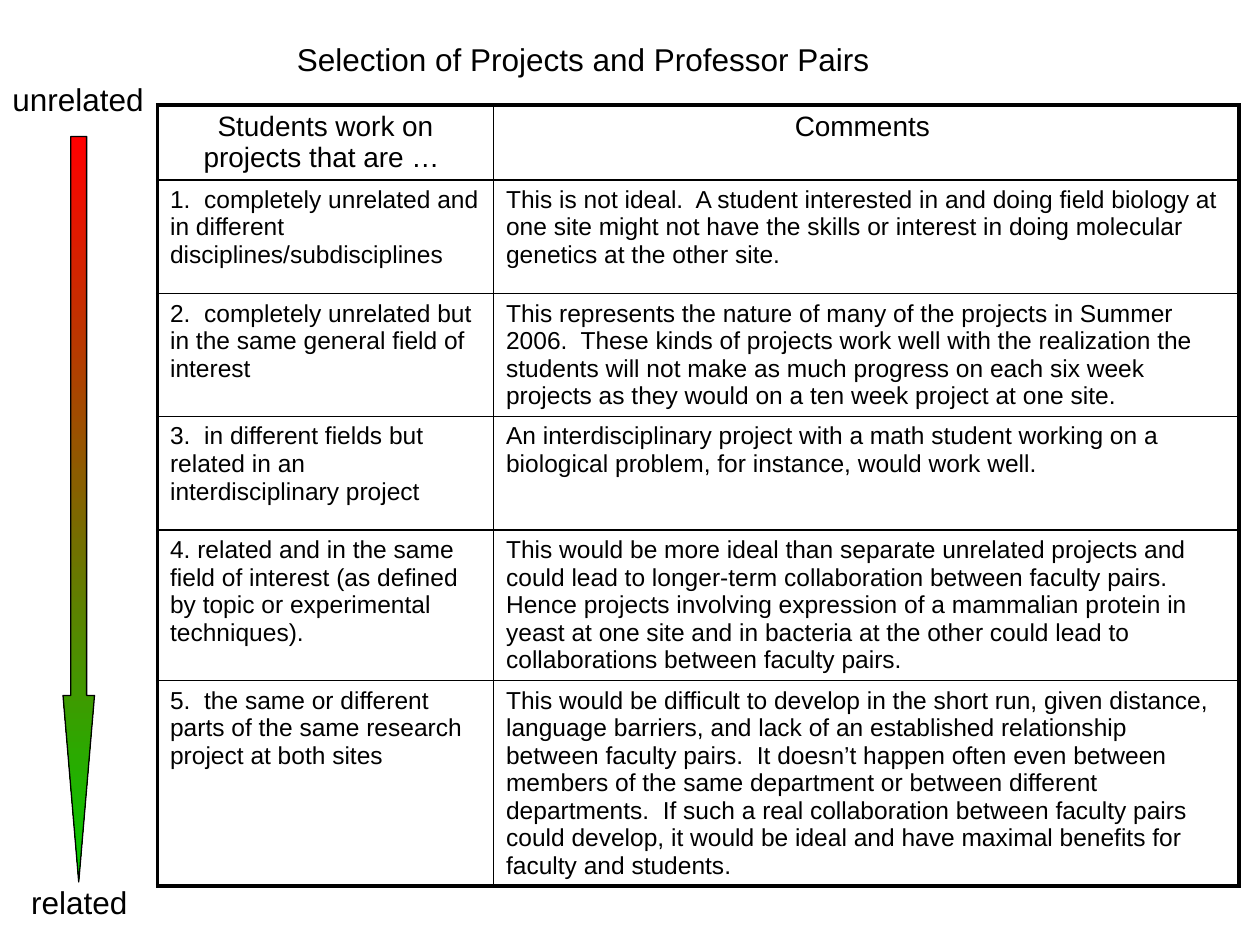
from pptx import Presentation
from pptx.dml.color import RGBColor
from pptx.enum.shapes import MSO_SHAPE as Shape
from pptx.enum.text import MSO_ANCHOR as Anchor, PP_ALIGN as Align
from pptx.util import Pt
from lxml.etree import SubElement
from pptx.oxml.ns import qn

BLACK = RGBColor(0, 0, 0)
RED = RGBColor(0xFF, 0, 0)
GREEN = RGBColor(0, 0xCC, 0)
FONT = "Arial"
THICK, THIN = 2.25, 1

# Content
TITLE = "Selection of Projects and Professor Pairs"
ROWS = [
    ("Students work on projects that are … ", "Comments "),
    ("1.  completely unrelated and in different disciplines/subdisciplines",
     "This is not ideal.  A student interested in and doing field biology at "
     "one site might not have the skills or interest in doing molecular "
     "genetics at the other site."),
    ("2.  completely unrelated but in the same general field of interest",
     "This represents the nature of many of the projects in Summer 2006.  "
     "These kinds of projects work well with the realization the students "
     "will not make as much progress on each six week projects as they would "
     "on a ten week project at one site."),
    ("3.  in different fields but related in an interdisciplinary project",
     "An interdisciplinary project with a math student working on a "
     "biological problem, for instance, would work well."),
    ("4. related and in the same field of interest (as defined by topic or "
     "experimental techniques).",
     "This would be more ideal than separate unrelated projects and could "
     "lead to longer-term collaboration between faculty pairs.  Hence "
     "projects involving expression of a mammalian protein in yeast at one "
     "site and in bacteria at the other could lead to collaborations between "
     "faculty pairs."),
    ("5.  the same or different parts of the same research project at both "
     "sites",
     "This would be difficult to develop in the short run, given distance, "
     "language barriers, and lack of an established relationship between "
     "faculty pairs.  It doesn’t happen often even between members of the "
     "same department or between different departments.  If such a real "
     "collaboration between faculty pairs could develop, it would be ideal "
     "and have maximal benefits for faculty and students."),
]
WIDTHS = [192, 426]
HEIGHTS = [42, 65, 67, 65, 81.5, 115]
LABELS = [("unrelated", 0, 42, 89.5), ("related", 10.75, 501, 70)]


def style(frame, size):
    for para in frame.paragraphs:
        for run in para.runs:
            font = run.font
            font.name, font.size, font.color.rgb = FONT, Pt(size), BLACK


def border(cell, side, width):
    line = SubElement(cell._tc.get_or_add_tcPr(), qn("a:ln" + side),
                      w=str(Pt(width)))
    fill = SubElement(line, qn("a:solidFill"))
    SubElement(fill, qn("a:srgbClr"), val=str(BLACK))


def space(para):
    before = SubElement(para._p.get_or_add_pPr(), qn("a:spcBef"))
    SubElement(before, qn("a:spcPct"), val="20000")


deck = Presentation()
deck.slide_width, deck.slide_height = Pt(720), Pt(540)
slide = deck.slides.add_slide(deck.slide_layouts[5])
shapes = slide.shapes

# Title
title = shapes.title
title.left, title.top, title.width, title.height = map(Pt, (162.5, 19.5, 345, 29))
title.text_frame.text = TITLE
title.text_frame.word_wrap = False
title.text_frame.vertical_anchor = Anchor.TOP
title.text_frame.paragraphs[0].alignment = Align.LEFT
style(title.text_frame, 18)

# Table
table = shapes.add_table(len(ROWS), len(WIDTHS), Pt(90), Pt(60),
                         Pt(sum(WIDTHS)), Pt(sum(HEIGHTS))).table
table.first_row = table.horz_banding = False
for col, width in zip(table.columns, WIDTHS):
    col.width = Pt(width)
for row, height in zip(table.rows, HEIGHTS):
    row.height = Pt(height)
for r, texts in enumerate(ROWS):
    for c, text in enumerate(texts):
        cell = table.cell(r, c)
        edges = {"L": c == 0, "R": c == len(WIDTHS) - 1,
                 "T": r == 0, "B": r == len(ROWS) - 1}
        for side, outer in edges.items():
            border(cell, side, THICK if outer else THIN)
        cell.fill.background()
        cell.text_frame.text = text
        para = cell.text_frame.paragraphs[0]
        para.alignment = Align.LEFT if r else Align.CENTER
        space(para)
        style(cell.text_frame, 14 if r else 16)

# Arrow from unrelated to related
arrow = shapes.add_shape(Shape.DOWN_ARROW, Pt(36), Pt(78), Pt(18), Pt(426))
arrow.shadow.inherit = False
arrow.adjustments[0], arrow.adjustments[1] = 0.5, 5.92
arrow.fill.gradient()
arrow.fill.gradient_angle = 270
for stop, color, pos in zip(arrow.fill.gradient_stops, (RED, GREEN), (0, 1)):
    stop.color.rgb, stop.position = color, pos
arrow.line.color.rgb = BLACK
arrow.line.width = Pt(0.75)

# Labels at the arrow ends
for text, left, top, width in LABELS:
    frame = shapes.add_textbox(Pt(left), Pt(top), Pt(width), Pt(29)).text_frame
    frame.text = text
    frame.word_wrap = False
    style(frame, 18)

deck.save("out.pptx")
